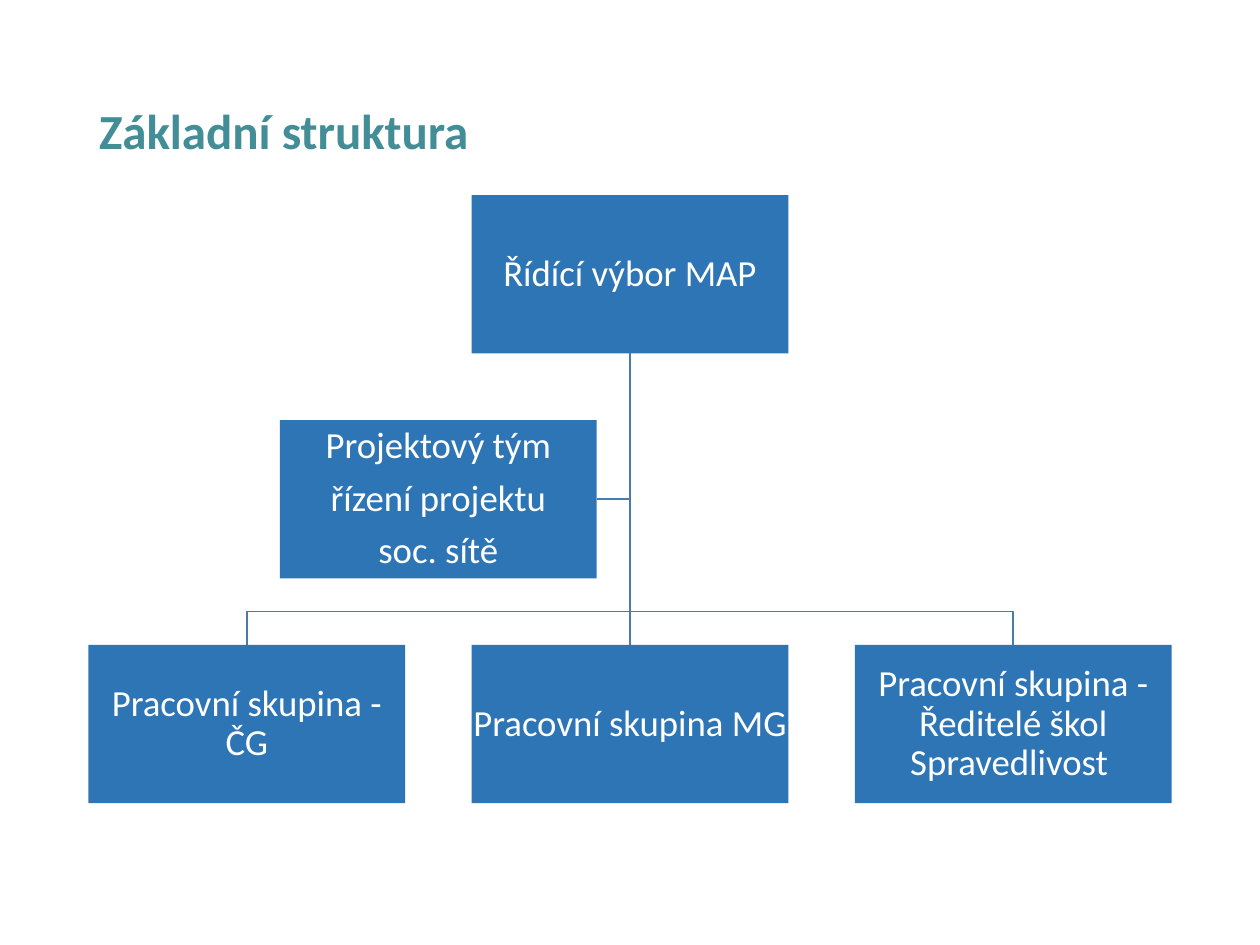
import pptx
import pptx.util
import pptx.dml.color
import pptx.enum.shapes
import pptx.enum.text
import pptx.oxml

Pt = pptx.util.Pt
ALIGN = pptx.enum.text.PP_ALIGN


def color(code):
    return pptx.dml.color.RGBColor.from_string(code)


def write(frame, text, size=21, tint="FFFFFF", bold=False, align=ALIGN.CENTER, after=0, inset=None):
    frame.word_wrap = True
    frame.auto_size = pptx.enum.text.MSO_AUTO_SIZE.NONE
    frame.vertical_anchor = pptx.enum.text.MSO_ANCHOR.MIDDLE
    if inset is not None:
        frame.margin_left = frame.margin_right = Pt(inset)
        frame.margin_top = frame.margin_bottom = Pt(inset)
    frame.text = text
    for para in frame.paragraphs:
        para.alignment = align
        para.line_spacing = 0.9
        para.space_before = Pt(0)
        para.space_after = Pt(after)
        for run in para.runs:
            font = run.font
            font.name = "Calibri"
            font.size = Pt(size)
            font.bold = bold
            font.color.rgb = color(tint)


class Chart:
    fill = "2E75B6"
    line = "497CAB"
    head = "428D96"
    wide = 181
    high = 90.5

    def __init__(self, slide):
        self.slide = slide

    def title(self, text, left, top, width, height):
        shape = self.slide.shapes.title
        shape.left, shape.top = Pt(left), Pt(top)
        shape.width, shape.height = Pt(width), Pt(height)
        write(shape.text_frame, text, size=28, tint=self.head, bold=True, align=ALIGN.LEFT)

    def box(self, text, mid, top):
        kind = pptx.enum.shapes.MSO_SHAPE.RECTANGLE
        shape = self.slide.shapes.add_shape(
            kind, Pt(mid - self.wide / 2), Pt(top), Pt(self.wide), Pt(self.high))
        shape.shadow.inherit = False
        shape.fill.solid()
        shape.fill.fore_color.rgb = color(self.fill)
        shape.line.fill.background()
        write(shape.text_frame, text, after=7.35, inset=0.95)
        return shape

    def stroke(self, shape):
        shape.line.color.rgb = color(self.line)
        shape.line.width = Pt(1)

    def bend(self, *spots):
        spots = [(Pt(x), Pt(y)) for x, y in spots]
        path = self.slide.shapes.build_freeform(*spots[0])
        path.add_line_segments(spots[1:], close=False)
        shape = path.convert_to_shape()
        shape.shadow.inherit = False
        shape.fill.background()
        self.stroke(shape)

    def join(self, start, end):
        kind = pptx.enum.shapes.MSO_CONNECTOR.STRAIGHT
        link = self.slide.shapes.add_connector(kind, 0, 0, 0, 0)
        link.begin_connect(start, 2)
        link.end_connect(end, 0)
        props = link._element.spPr
        self.stroke(link)
        props.append(pptx.oxml.parse_xml(
            '<a:effectLst xmlns:a="http://schemas.openxmlformats.org/drawingml/2006/main"/>'))


def main():
    deck = pptx.Presentation()
    deck.slide_width, deck.slide_height = Pt(720), Pt(540)
    chart = Chart(deck.slides.add_slide(deck.slide_layouts[5]))
    chart.title("Základní struktura", 49.5, 41, 621, 70.5)

    mid, gap = 360, 38
    step = chart.wide + gap
    tops = [111.5 + row * (chart.high + gap) for row in range(3)]
    base = tops[0] + chart.high
    bus = tops[2] - gap / 2
    side = tops[1] + chart.high / 2
    team = mid - step / 2

    chart.bend((mid, base), (mid, side), (team + chart.wide / 2, side))
    for end in (mid + step, mid - step):
        chart.bend((mid, base), (mid, bus), (end, bus), (end, tops[2]))

    board = chart.box("Řídící výbor MAP", mid, tops[0])
    names = ("Pracovní skupina - ČG", "Pracovní skupina MG",
             "Pracovní skupina - Ředitelé škol Spravedlivost ")
    groups = [chart.box(name, mid + (col - 1) * step, tops[2])
              for col, name in enumerate(names)]
    chart.box("Projektový tým\nřízení projektu\nsoc. sítě", team, tops[1])
    chart.join(board, groups[1])

    deck.save("out.pptx")


if __name__ == "__main__":
    main()
